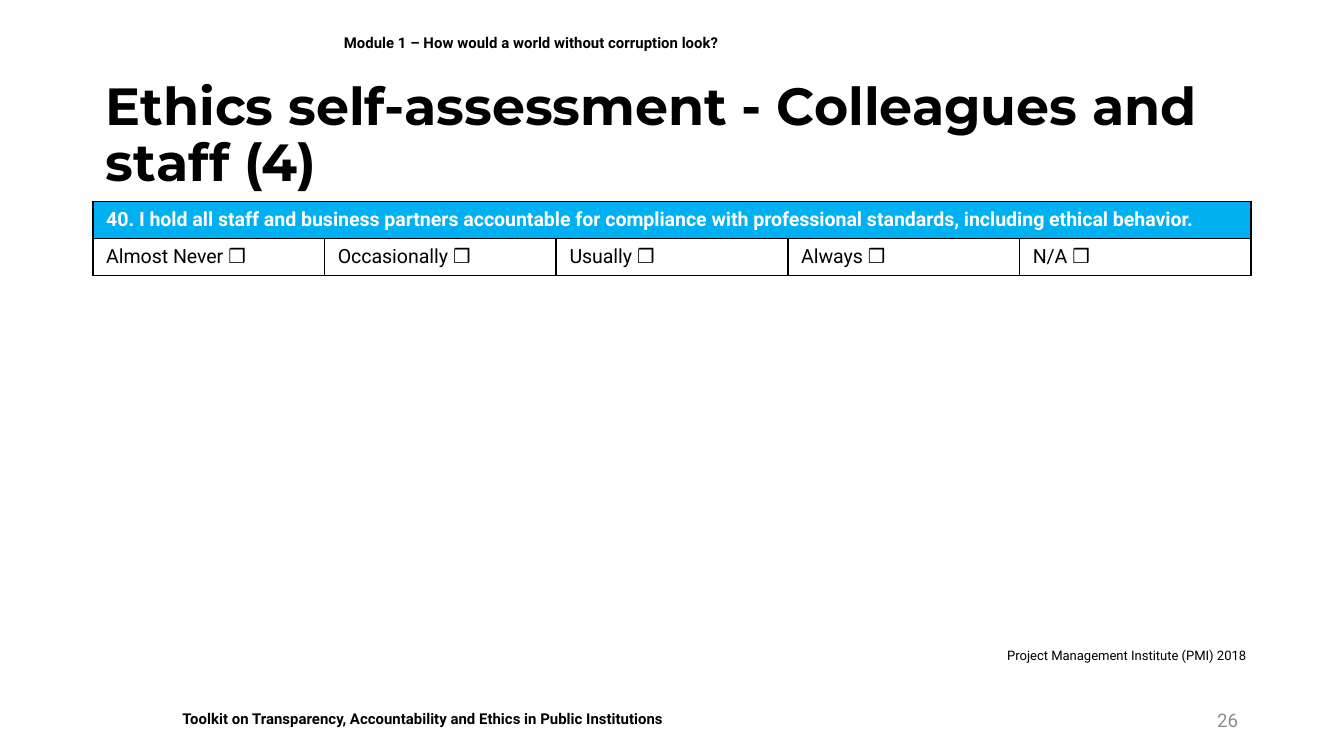
from lxml import etree
from pptx import Presentation
from pptx.dml.color import RGBColor
from pptx.enum.shapes import MSO_SHAPE
from pptx.enum.text import MSO_ANCHOR, PP_ALIGN
from pptx.oxml.ns import qn
from pptx.util import Inches, Pt

RECTANGLE = MSO_SHAPE.RECTANGLE
TOP, MIDDLE = MSO_ANCHOR.TOP, MSO_ANCHOR.MIDDLE
LEFT, RIGHT = PP_ALIGN.LEFT, PP_ALIGN.RIGHT

SLIDE_WIDTH = 10
SLIDE_HEIGHT = SLIDE_WIDTH * 9 / 16

COLORS = {
    "black": "000000",
    "white": "FFFFFF",
    "question": "00B0F0",
    "number": "8C8C8C",
}
QUESTION = (
    "40. I hold all staff and business partners accountable for compliance "
    "with professional standards, including ethical behavior. "
)
ANSWERS = ["Almost Never ❒", "Occasionally ❒", "Usually ❒", "Always ❒", "N/A ❒"]


class SlideBuilder:
    body_font = "Roboto"
    title_font = "Montserrat"

    def __init__(self, slide):
        self.slide = slide

    def color(self, name):
        return RGBColor.from_string(COLORS[name])

    def format_text(self, frame, text, size, color="black", bold=False,
                    align=LEFT, anchor=TOP, font=body_font):
        frame.text = text
        frame.word_wrap = True
        frame.vertical_anchor = anchor
        paragraph = frame.paragraphs[0]
        paragraph.alignment = align
        for run in paragraph.runs:
            run.font.name = font
            run.font.size = Pt(size)
            run.font.bold = bold
            run.font.color.rgb = self.color(color)
        return paragraph

    def text(self, box, text, size, **style):
        shape = self.slide.shapes.add_textbox(*map(Inches, box))
        return self.format_text(shape.text_frame, text, size, **style)

    def title(self, box, text):
        paragraph = self.text(box, text, 28, bold=True, anchor=MIDDLE,
                              font=self.title_font)
        paragraph.line_spacing = 0.9

    def band(self, box, text):
        shape = self.slide.shapes.add_shape(RECTANGLE, *map(Inches, box))
        shape.shadow.inherit = False
        shape.fill.solid()
        shape.fill.fore_color.rgb = self.color("white")
        shape.line.fill.background()
        self.format_text(shape.text_frame, text, 8, bold=True)

    def border(self, cell):
        properties = cell._tc.get_or_add_tcPr()
        for side in ("a:lnL", "a:lnR", "a:lnT", "a:lnB"):
            line = etree.SubElement(properties, qn(side), w=str(Pt(1)))
            fill = etree.SubElement(line, qn("a:solidFill"))
            etree.SubElement(fill, qn("a:srgbClr"), val=COLORS["black"])

    def question_table(self, box, question, answers):
        frame = self.slide.shapes.add_table(2, len(answers), *map(Inches, box))
        table = frame.table
        table.first_row = False
        table.horz_banding = False
        for cell in table.iter_cells():
            self.border(cell)
            cell.fill.background()
        header = table.cell(0, 0)
        header.merge(table.cell(0, len(answers) - 1))
        header.fill.solid()
        header.fill.fore_color.rgb = self.color("question")
        self.format_text(header.text_frame, question, 10.5, color="white", bold=True)
        for column, answer in enumerate(answers):
            self.format_text(table.cell(1, column).text_frame, answer, 10.5)


def main():
    presentation = Presentation()
    presentation.slide_width = Inches(SLIDE_WIDTH)
    presentation.slide_height = Inches(SLIDE_HEIGHT)
    builder = SlideBuilder(presentation.slides.add_slide(presentation.slide_layouts[6]))

    builder.band((1.26, 5.23, 7.17, 0.24),
                 "Toolkit on Transparency, Accountability and Ethics in Public Institutions")
    builder.question_table((0.69, 1.5, 8.62, 0.55), QUESTION, ANSWERS)
    builder.text((2.46, 0.1, 6.85, 0.44),
                 "Module 1 – How would a world without corruption look?",
                 8, bold=True, anchor=MIDDLE)
    builder.text((7.06, 5.21, 2.25, 0.3), "26", 10, color="number",
                 align=RIGHT, anchor=MIDDLE)
    builder.title((0.69, 0.64, 8.62, 0.75),
                  "Ethics self-assessment - Colleagues and staff (4)")
    builder.text((7.39, 4.77, 1.98, 0.22),
                 "Project Management Institute (PMI) 2018", 7, align=RIGHT)

    presentation.save("out.pptx")


if __name__ == "__main__":
    main()
